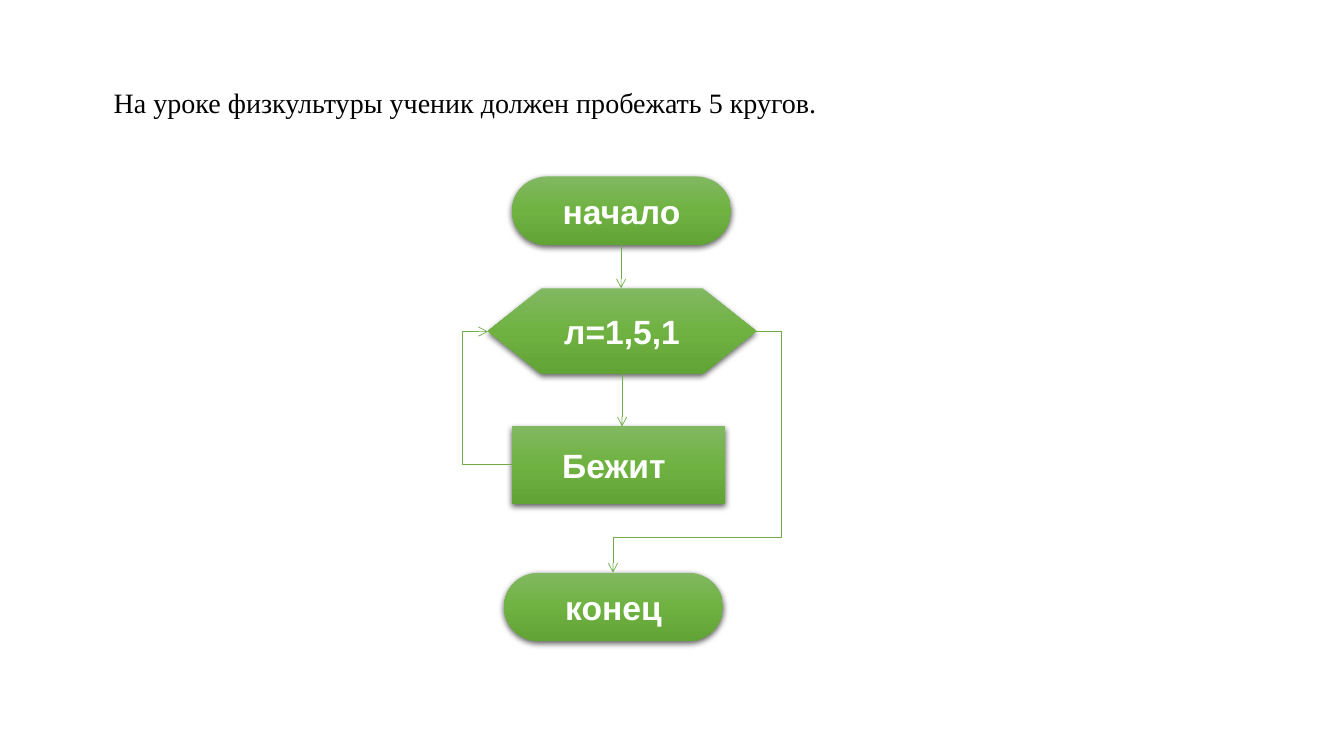
import pptx
import pptx.util
import pptx.oxml
import pptx.oxml.ns
import pptx.dml.color
import pptx.enum.shapes
import pptx.enum.text

PX = 9144
WHITE = pptx.dml.color.RGBColor(0xFF, 0xFF, 0xFF)
BLACK = pptx.dml.color.RGBColor(0x00, 0x00, 0x00)
GREEN = pptx.dml.color.RGBColor(0x70, 0xAD, 0x47)
GREEN_TOP = pptx.dml.color.RGBColor(0x81, 0xB8, 0x61)
GREEN_MIDDLE = pptx.dml.color.RGBColor(0x6F, 0xB2, 0x42)
GREEN_BOTTOM = pptx.dml.color.RGBColor(0x62, 0xA3, 0x36)

NS = pptx.oxml.ns.nsdecls("a")
STOPS = "".join(
    f'<a:gs pos="{pos}"><a:srgbClr val="{color}"/></a:gs>'
    for pos, color in ((0, GREEN_TOP), (50000, GREEN_MIDDLE), (100000, GREEN_BOTTOM))
)
GRADIENT = f'<a:gradFill {NS} rotWithShape="1"><a:gsLst>{STOPS}</a:gsLst><a:lin ang="5400000" scaled="0"/></a:gradFill>'
SHADOW = (
    f'<a:effectLst {NS}><a:outerShdw blurRad="57150" dist="19050" dir="5400000" algn="ctr" rotWithShape="0">'
    f'<a:srgbClr val="{BLACK}"><a:alpha val="63000"/></a:srgbClr></a:outerShdw></a:effectLst>'
)


def px(*lengths):
    return [pptx.util.Emu(length * PX) for length in lengths]


def add_text(paragraph, text, font_name, size, color, bold):
    run = paragraph.add_run()
    run.text = text
    run.font.name = font_name
    run.font.size = pptx.util.Pt(size)
    run.font.color.rgb = color
    run.font.bold = bold


prs = pptx.Presentation()
prs.slide_width, prs.slide_height = px(1333, 750)
slide = prs.slides.add_slide(prs.slide_layouts[6])

KIND = pptx.enum.shapes.MSO_SHAPE
steps = [
    ("начало", KIND.FLOWCHART_TERMINATOR, 508, 175, 217, 68),
    ("л=1,5,1", KIND.FLOWCHART_PREPARATION, 484, 286, 266, 85),
    ("Бежит ", KIND.FLOWCHART_PROCESS, 508, 423, 211, 77),
    ("конец", KIND.FLOWCHART_TERMINATOR, 500, 568, 217, 68),
]
for label, kind, *place in steps:
    step = slide.shapes.add_shape(kind, *px(*place))
    step.line.fill.background()
    props = step.element.spPr
    props.find(pptx.oxml.ns.qn("a:ln")).addprevious(pptx.oxml.parse_xml(GRADIENT))
    props.append(pptx.oxml.parse_xml(SHADOW))
    frame = step.text_frame
    frame.word_wrap = True
    frame.vertical_anchor = pptx.enum.text.MSO_ANCHOR.MIDDLE
    frame.paragraphs[0].alignment = pptx.enum.text.PP_ALIGN.CENTER
    add_text(frame.paragraphs[0], label, "Arial", 24, WHITE, True)

arrows = [
    ("bentConnector3", (508, 461, 484, 329), [206700]),
    ("bentConnector4", (750, 329, 608, 568), [-17600, 85600]),
    ("line", (616, 243, 616, 286), []),
    ("line", (617, 371, 617, 423), []),
]
for preset, ends, bends in arrows:
    arrow = slide.shapes.add_connector(pptx.enum.shapes.MSO_CONNECTOR.STRAIGHT, *px(*ends))
    arrow.line.color.rgb = GREEN
    arrow.line.width = pptx.util.Pt(0.5)
    props = arrow.element.spPr
    props.find(pptx.oxml.ns.qn("a:ln")).append(pptx.oxml.parse_xml(f'<a:tailEnd {NS} type="arrow"/>'))
    props.append(pptx.oxml.parse_xml(f"<a:effectLst {NS}/>"))
    geometry = props.find(pptx.oxml.ns.qn("a:prstGeom"))
    geometry.set("prst", preset)
    for number, bend in enumerate(bends, 1):
        name = f"adj{number}"
        guide = pptx.oxml.parse_xml(f'<a:gd {NS} name="{name}" fmla="val {bend}"/>')
        geometry.find(pptx.oxml.ns.qn("a:avLst")).append(guide)

task = slide.shapes.add_textbox(*px(103, 63, 727, 61)).text_frame
task.word_wrap = True
task.auto_size = pptx.enum.text.MSO_AUTO_SIZE.SHAPE_TO_FIT_TEXT
task.paragraphs[0].alignment = pptx.enum.text.PP_ALIGN.JUSTIFY
task.paragraphs[0].line_spacing = 1.5
add_text(task.paragraphs[0], "На уроке физкультуры ученик должен пробежать 5 кругов.", "Times New Roman", 20, BLACK, False)

prs.save("out.pptx")
